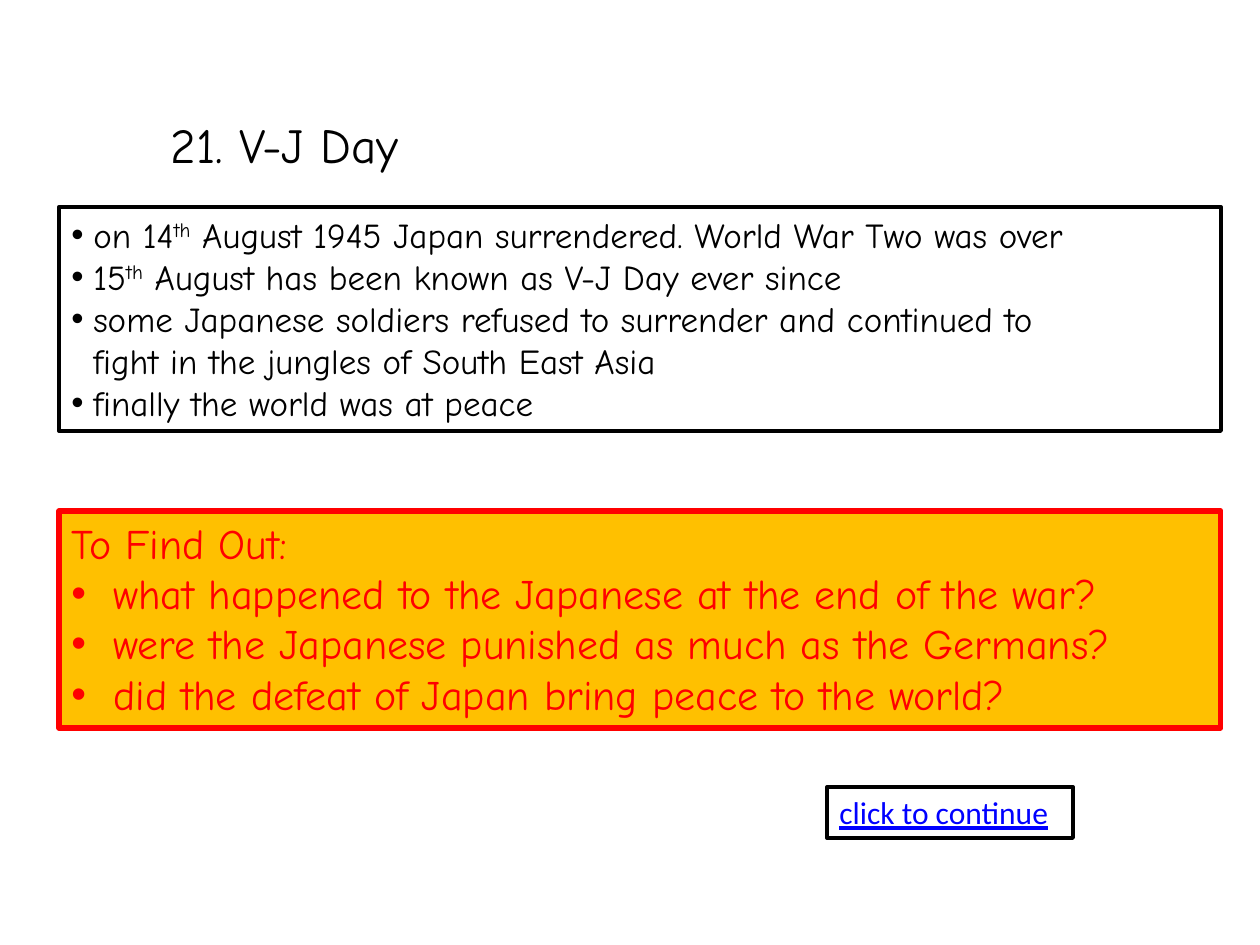
"""Build the V-J Day slide with its facts, its questions and its continue box."""
from lxml import etree
from pptx import Presentation
from pptx.dml.color import RGBColor
from pptx.enum.shapes import MSO_SHAPE
from pptx.enum.text import MSO_ANCHOR, MSO_AUTO_SIZE, PP_ALIGN
from pptx.oxml.ns import qn
from pptx.util import Emu, Pt

RECTANGLE = MSO_SHAPE.RECTANGLE
TOP = MSO_ANCHOR.TOP
GROW = MSO_AUTO_SIZE.SHAPE_TO_FIT_TEXT
LEFT = PP_ALIGN.LEFT
PX = 914400 / 126

THEME = {
    "black": RGBColor(0, 0, 0),
    "red": RGBColor(255, 0, 0),
    "amber": RGBColor(255, 192, 0),
    "blue": RGBColor(0, 0, 255),
    "hand": "Comic Neue",
    "plain": "Calibri",
    "bullet": "Arial",
    "title": Pt(28),
    "question": Pt(24),
    "fact": Pt(20),
    "button": Pt(18),
}


def place(shape, bounds):
    for name, value in zip(("left", "top", "width", "height"), bounds):
        setattr(shape, name, Emu(round(value * PX)))


def write(shape, lines, font, indent=0):
    frame = shape.text_frame
    for name, value in {"word_wrap": True, "auto_size": GROW, "vertical_anchor": TOP}.items():
        setattr(frame, name, value)
    for index, (marker, text) in enumerate(lines):
        para = frame.add_paragraph() if index else frame.paragraphs[0]
        para.alignment = LEFT
        margin = round(indent * PX) if marker != "heading" else 0
        properties = para._p.get_or_add_pPr()
        properties.set("marL", str(margin))
        properties.set("indent", str(-margin if marker == "bullet" else 0))
        if marker == "bullet":
            etree.SubElement(properties, qn("a:buFont"), typeface=THEME["bullet"])
            etree.SubElement(properties, qn("a:buChar"), char="•")
        for part, words in enumerate(text.split("^")):
            span = para.add_run()
            span.text = words
            for name, value in font.items():
                setattr(span.font, name, value)
            span.font.color.rgb = shape_color[shape.shape_id]
            if part % 2:
                span._r.get_or_add_rPr().set("baseline", "30000")


deck = Presentation()
deck.slide_width, deck.slide_height = Emu(round(1260 * PX)), Emu(round(945 * PX))
page = deck.slides.add_slide(deck.slide_layouts[5])

title = page.shapes.title
shape_color = {title.shape_id: THEME["black"]}
place(title, (158, 108, 798, 72))
write(title, [("heading", "21. V-J Day")], {"name": THEME["hand"], "size": THEME["title"]})

facts = [
    ("bullet", "on 14^th^ August 1945 Japan surrendered. World War Two was over"),
    ("bullet", "15^th^ August has been known as V-J Day ever since"),
    ("bullet", "some Japanese soldiers refused to surrender and continued to"),
    ("continued", "fight in the jungles of South East Asia"),
    ("bullet", "finally the world was at peace"),
]
questions = [
    ("heading", "To Find Out:"),
    ("bullet", "what happened to the Japanese at the end of the war?"),
    ("bullet", "were the Japanese punished as much as the Germans?"),
    ("bullet", "did the defeat of Japan bring peace to the world?"),
]
button = [("heading", "click to continue")]

boxes = [
    ((59, 207, 1162, 224), None, "black", 2.25, "black", facts, 22,
     {"name": THEME["hand"], "size": THEME["fact"]}),
    ((59, 511, 1162, 217), "amber", "red", 3, "red", questions, 42,
     {"name": THEME["hand"], "size": THEME["question"]}),
    ((827, 787, 246, 51), None, "black", 2.25, "blue", button, 0,
     {"name": THEME["plain"], "size": THEME["button"], "underline": True}),
]
for bounds, fill, line, weight, ink, lines, indent, font in boxes:
    box = page.shapes.add_shape(RECTANGLE, 0, 0, 0, 0)
    place(box, bounds)
    box.shadow.inherit = False
    if fill:
        box.fill.solid()
        box.fill.fore_color.rgb = THEME[fill]
    else:
        box.fill.background()
    box.line.color.rgb = THEME[line]
    box.line.width = Pt(weight)
    shape_color[box.shape_id] = THEME[ink]
    write(box, lines, font, indent)

deck.save("out.pptx")
